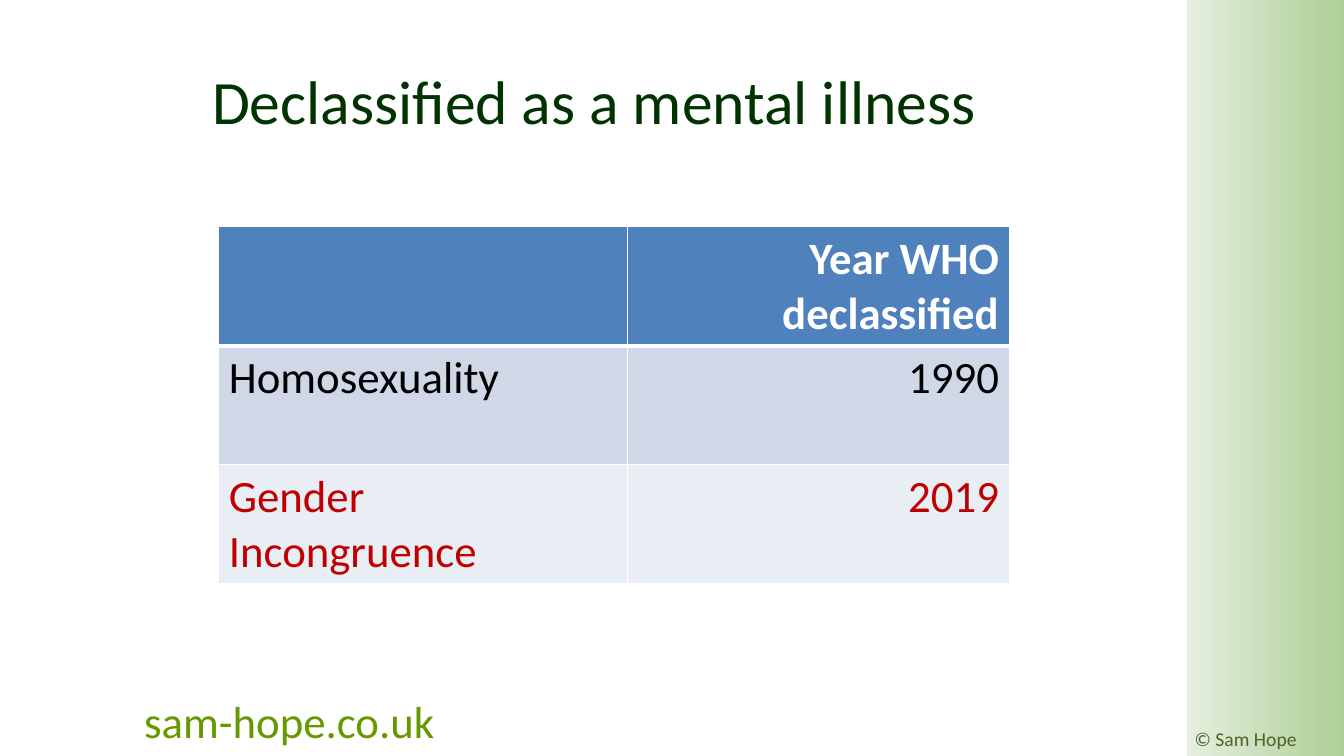
"""Build the slide on the years the WHO declassified two diagnoses."""
from lxml.etree import SubElement
from pptx import Presentation
from pptx.dml.color import RGBColor
from pptx.enum.shapes import MSO_SHAPE as Shape
from pptx.enum.text import MSO_ANCHOR as Anchor, PP_ALIGN as Align
from pptx.oxml.ns import qn
from pptx.util import Inches, Pt

COLORS = {
    "band_light": "E6EFE0", "band_dark": "ADCF95",
    "title": "003300", "site": "669900", "credit": "4F6228",
    "header": "4F81BD", "odd_row": "D0D8E8", "even_row": "E9EDF4",
    "white": "FFFFFF", "black": "000000", "red": "C00000",
}


def write(frame, text, size, color, align=Align.LEFT, bold=False):
    frame.word_wrap = True
    para = frame.paragraphs[0]
    para.text = text
    para.alignment = align
    para.font.name = "Calibri"
    para.font.size = Pt(size)
    para.font.bold = bold
    para.font.color.rgb = RGBColor.from_string(COLORS[color])


def add_border(cell, side, width):
    line = SubElement(cell._tc.get_or_add_tcPr(), qn(f"a:ln{side}"), w=str(Pt(width)))
    fill = SubElement(line, qn("a:solidFill"))
    SubElement(fill, qn("a:srgbClr"), val=COLORS["white"])


deck = Presentation()
deck.slide_width = Inches(13.33)
deck.slide_height = Inches(7.5)
page = deck.slides.add_slide(deck.slide_layouts[5])

band = page.shapes.add_shape(Shape.RECTANGLE, Inches(11.77), 0, Inches(1.56), Inches(7.5))
band.shadow.inherit = False
band.line.fill.background()
band.fill.gradient()
band.fill.gradient_angle = 0
for stop, color in zip(band.fill.gradient_stops, ("band_light", "band_dark")):
    stop.color.rgb = RGBColor.from_string(COLORS[color])

title = page.shapes.title
title.left, title.top = Inches(0.52), Inches(0.37)
title.width, title.height = Inches(10.75), Inches(1.25)
title.text_frame.vertical_anchor = Anchor.MIDDLE
write(title.text_frame, "Declassified as a mental illness", 44, "title", Align.CENTER)

footers = [
    (0.04, 6.83, 4.37, 0.67, "sam-hope.co.uk", 32, "site", Align.RIGHT),
    (11.75, 7.16, 1.58, 0.34, "© Sam Hope", 14, "credit", Align.LEFT),
]
for left, top, width, height, text, size, color, align in footers:
    box = page.shapes.add_textbox(Inches(left), Inches(top), Inches(width), Inches(height))
    write(box.text_frame, text, size, color, align)

rows = [
    ("", "Year WHO declassified", "header", "white"),
    ("Homosexuality", "1990", "odd_row", "black"),
    ("Gender Incongruence", "2019", "even_row", "red"),
]
table = page.shapes.add_table(
    len(rows), 2, Inches(2.17), Inches(2.25), Inches(7.84), Inches(3.54)).table
for column, width in zip(table.columns, (4.05, 3.79)):
    column.width = Inches(width)
for row, (name, year, fill, color) in enumerate(rows):
    for col, (text, align) in enumerate(((name, Align.LEFT), (year, Align.RIGHT))):
        cell = table.cell(row, col)
        widths = {"L": 1, "R": 1, "T": 3 if row == 1 else 1, "B": 3 if row == 0 else 1}
        for side, width in widths.items():
            add_border(cell, side, width)
        cell.fill.solid()
        cell.fill.fore_color.rgb = RGBColor.from_string(COLORS[fill])
        write(cell.text_frame, text, 32, color, align, bold=row == 0)

deck.save("out.pptx")
